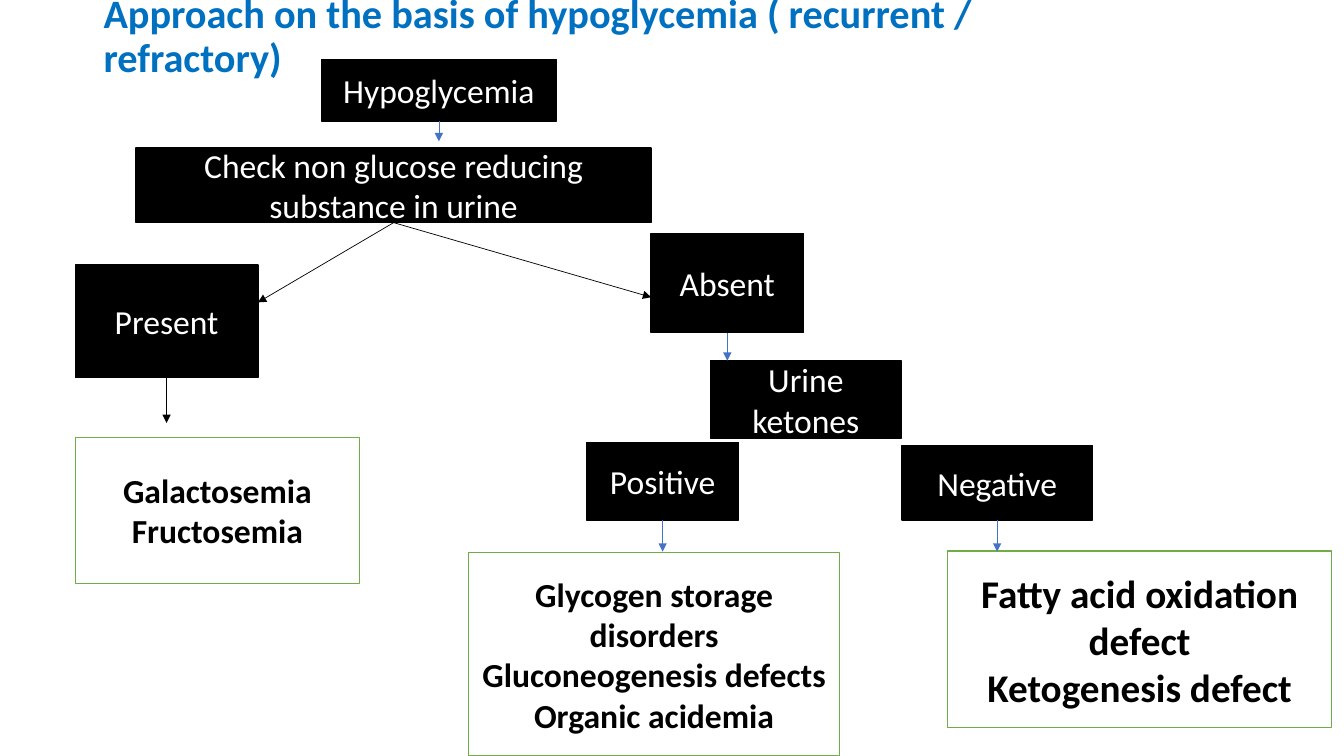
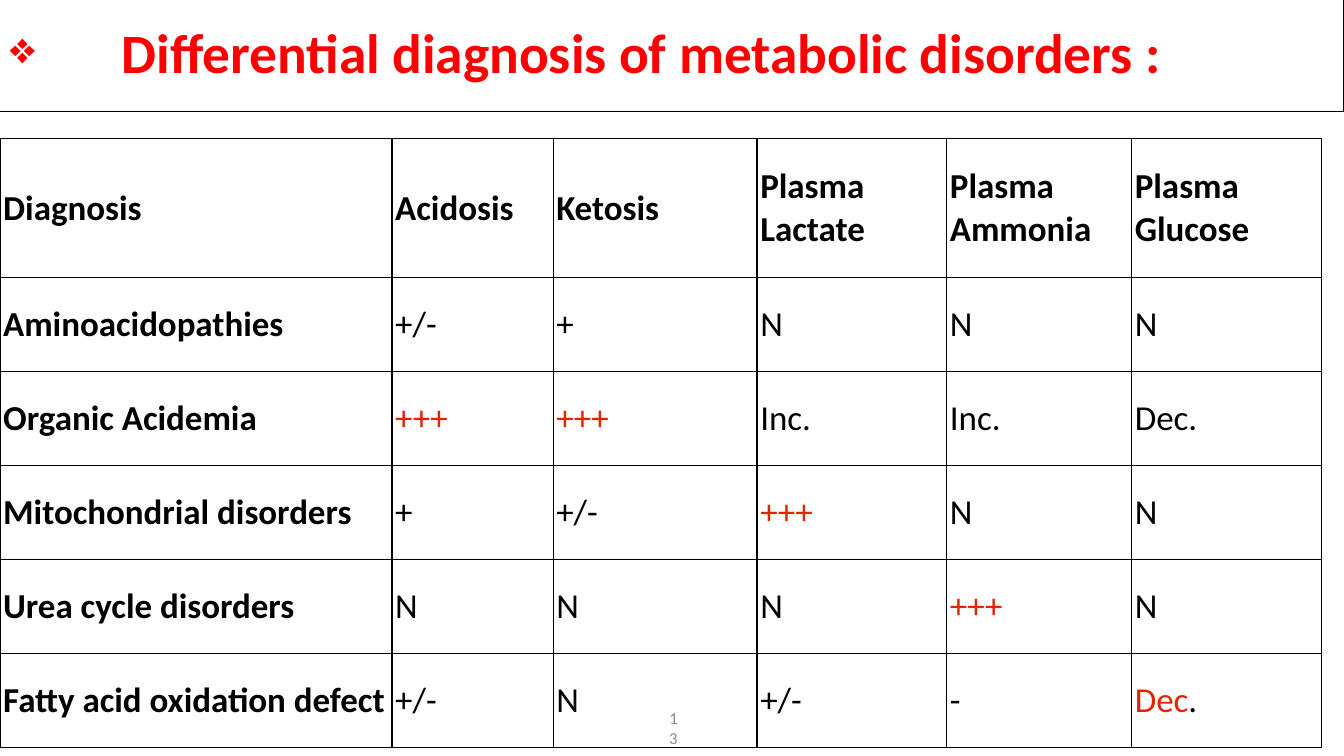
import pptx
import pptx.util
import pptx.dml.color
import pptx.enum.shapes
import pptx.enum.text
import pptx.oxml
import pptx.oxml.ns

Cm = pptx.util.Cm
Pt = pptx.util.Pt
ALIGN = pptx.enum.text.PP_ALIGN
MIDDLE = pptx.enum.text.MSO_ANCHOR.MIDDLE

FONT = "Calibri"
BLACK, WHITE, GREY = "000000", "FFFFFF", "8C8C8C"
BLUE, GREEN, ARROW_BLUE = "0070C0", "70AD47", "4472C4"
TITLE_RED, MARK_RED = "FF0000", "E22400"
PAGE_WIDTH, PAGE_HEIGHT = 33.87, 19.05

STEPS = {
    "Hypoglycemia": (6.2, 0, 5.92, 1.55),
    "Check non glucose reducing substance in urine": (1.53, 2.23, 12.98, 1.88),
    "Present": (0, 5.18, 4.6, 2.84),
    "Absent": (14.51, 4.39, 3.84, 2.49),
    "Urine ketones": (16.01, 7.59, 4.8, 1.96),
    "Positive": (12.88, 9.65, 3.84, 1.96),
    "Negative": (20.83, 9.73, 4.8, 1.88),
}
OUTCOMES = [
    ((0, 9.52, 7.16, 3.68), 24, ["Galactosemia", "Fructosemia"]),
    ((9.91, 12.42, 9.35, 5.13), 24,
     ["Glycogen storage disorders", "Gluconeogenesis defects", "Organic acidemia"]),
    ((21.98, 12.39, 9.68, 4.45), 28,
     ["Fatty acid oxidation defect", "Ketogenesis defect"]),
]
BRANCHES = [(4.6, 6.12), (14.51, 5.99)]
DROPS = [
    ("Hypoglycemia", 0.51, ARROW_BLUE),
    ("Present", 1.14, BLACK),
    ("Absent", 0.71, ARROW_BLUE),
    ("Positive", 0.79, ARROW_BLUE),
    ("Negative", 0.79, ARROW_BLUE),
]

HIGH = [("+++", MARK_RED)]
LOW = [("Dec", MARK_RED), (".", BLACK)]
DIAGNOSES = [
    ["Diagnosis", "Acidosis", "Ketosis", "Plasma Lactate", "Plasma Ammonia", "Plasma Glucose"],
    ["Aminoacidopathies", "+/-", "+", "N", "N", "N"],
    ["Organic Acidemia", HIGH, HIGH, "Inc.", "Inc.", "Dec."],
    ["Mitochondrial disorders", "+", "+/-", HIGH, "N", "N"],
    ["Urea cycle disorders", "N", "N", "N", HIGH, "N"],
    ["Fatty acid oxidation defect", "+/-", "N", "+/-", "-", LOW],
]
COLUMN_WIDTHS = [9.88, 4.06, 5.14, 4.78, 4.66, 4.78]
HEADER_HEIGHT, ROW_HEIGHT = 3.49, 2.37


def colour(code):
    """Turn a hex string into a colour."""
    return pptx.dml.color.RGBColor.from_string(code)


def lengths(box):
    """Turn a box in centimetres into lengths."""
    return [Cm(value) for value in box]


def write(frame, paragraphs, size, code, bold=False, align=ALIGN.LEFT, spacing=1.0):
    """Fill a text frame; a paragraph is a string or a list of coloured spans."""
    frame.word_wrap = True
    frame.vertical_anchor = MIDDLE
    for index, content in enumerate(paragraphs):
        para = frame.add_paragraph() if index else frame.paragraphs[0]
        para.alignment = align
        para.line_spacing = spacing
        spans = [(content, code)] if isinstance(content, str) else content
        for text, span_code in spans:
            span = para.add_run()
            span.text = text
            span.font.name = FONT
            span.font.size = Pt(size)
            span.font.bold = bold
            span.font.color.rgb = colour(span_code)


def add_box(page, box, fill, line, weight=1):
    """Add a rectangle, left unfilled when fill is None."""
    shape = page.shapes.add_shape(pptx.enum.shapes.MSO_SHAPE.RECTANGLE, *lengths(box))
    shape.shadow.inherit = False
    if fill:
        shape.fill.solid()
        shape.fill.fore_color.rgb = colour(fill)
    else:
        shape.fill.background()
    shape.line.color.rgb = colour(line)
    shape.line.width = Pt(weight)
    return shape


def add_text(page, box):
    """Add a text box."""
    return page.shapes.add_textbox(*lengths(box))


def write_title(shape, text, size, code):
    """Write a title in the shared style."""
    write(shape.text_frame, [text], size, code, bold=True, spacing=0.9)


def add_bullet(para, symbol, indent, percent):
    """Give a paragraph a hanging bullet."""
    properties = para._p.get_or_add_pPr()
    properties.set("marL", str(Cm(indent)))
    properties.set("indent", str(-Cm(indent)))
    for tag, name, value in (("buSzPct", "val", str(percent * 1000)), ("buChar", "char", symbol)):
        element = pptx.oxml.parse_xml(f"<a:{tag} {pptx.oxml.ns.nsdecls('a')}/>")
        element.set(name, value)
        properties.append(element)


def add_arrow(page, start, end_x, end_y, code):
    """Draw an arrow from the bottom of a box to a point."""
    arrow = page.shapes.add_connector(
        pptx.enum.shapes.MSO_CONNECTOR.STRAIGHT, start.left, start.top, end_x, end_y)
    arrow.begin_connect(start, 2)
    arrow.line.color.rgb = colour(code)
    arrow.line.width = Pt(0.5)
    names = pptx.oxml.ns.nsdecls("a")
    arrow.line._get_or_add_ln().append(pptx.oxml.parse_xml(f'<a:tailEnd {names} type="triangle"/>'))
    arrow._element.spPr.append(pptx.oxml.parse_xml(f"<a:effectLst {names}/>"))


def add_flowchart(page, left, top):
    """Place the decision tree with its corner at the given point."""
    def place(box):
        """Shift a box into the region."""
        return (left + box[0], top + box[1], box[2], box[3])

    steps = {}
    for text, box in STEPS.items():
        steps[text] = add_box(page, place(box), BLACK, BLACK)
        write(steps[text].text_frame, [text], 24, WHITE, align=ALIGN.CENTER)
    for box, size, paragraphs in OUTCOMES:
        outcome = add_box(page, place(box), WHITE, GREEN)
        write(outcome.text_frame, paragraphs, size, BLACK, bold=True, align=ALIGN.CENTER)
    check = steps["Check non glucose reducing substance in urine"]
    for x, y in BRANCHES:
        add_arrow(page, check, Cm(left + x), Cm(top + y), BLACK)
    for text, drop, code in DROPS:
        step = steps[text]
        add_arrow(page, step, step.left + step.width // 2,
                  step.top + step.height + Cm(drop), code)


def set_borders(cell):
    """Draw thin black lines on all sides of a cell."""
    properties = cell._tc.get_or_add_tcPr()
    for side in "LRTB":
        properties.append(pptx.oxml.parse_xml(
            f'<a:ln{side} {pptx.oxml.ns.nsdecls("a")} w="{Pt(1)}">'
            f'<a:solidFill><a:srgbClr val="{BLACK}"/></a:solidFill></a:ln{side}>'))


def add_diagnosis_table(page, left, top):
    """Place the table of diagnoses with its corner at the given point."""
    heights = [HEADER_HEIGHT] + [ROW_HEIGHT] * (len(DIAGNOSES) - 1)
    box = (left, top, sum(COLUMN_WIDTHS), sum(heights))
    table = page.shapes.add_table(len(heights), len(COLUMN_WIDTHS), *lengths(box)).table
    table.first_row = False
    table.horz_banding = False
    for column, width in zip(table.columns, COLUMN_WIDTHS):
        column.width = Cm(width)
    for row_index, (row, height) in enumerate(zip(table.rows, heights)):
        row.height = Cm(height)
        for column_index, content in enumerate(DIAGNOSES[row_index]):
            cell = table.cell(row_index, column_index)
            cell.margin_left = cell.margin_right = Cm(0.08)
            cell.margin_top = cell.margin_bottom = Cm(0.08)
            set_borders(cell)
            cell.fill.background()
            write(cell.text_frame, [content], 25, BLACK,
                  bold=row_index == 0 or column_index == 0)
            cell.vertical_anchor = MIDDLE


def build_approach(page):
    """Build the slide with the decision tree."""
    title = add_text(page, (2.36, 0, 26.85, 1.88))
    write_title(title, "Approach on the basis of hypoglycemia ( recurrent / refractory)", 28.8, BLUE)
    add_flowchart(page, 1.9, 1.5)


def build_differential(page):
    """Build the slide with the table of diagnoses."""
    number = add_text(page, (16.54, 17.83, 0.79, 1.02))
    write(number.text_frame, ["13"], 12, GREY, align=ALIGN.RIGHT)
    title = add_box(page, (0, 0, PAGE_WIDTH, 2.82), None, BLACK, 0.75)
    write_title(title, "Differential diagnosis of metabolic disorders :", 39.6, TITLE_RED)
    add_bullet(title.text_frame.paragraphs[0], "❖", 2.82, 80)
    add_diagnosis_table(page, 0, 3.5)


def main():
    """Build the deck and save it."""
    deck = pptx.Presentation()
    deck.slide_width, deck.slide_height = Cm(PAGE_WIDTH), Cm(PAGE_HEIGHT)
    for build in (build_approach, build_differential):
        build(deck.slides.add_slide(deck.slide_layouts[6]))
    deck.save("out.pptx")


if __name__ == "__main__":
    main()
